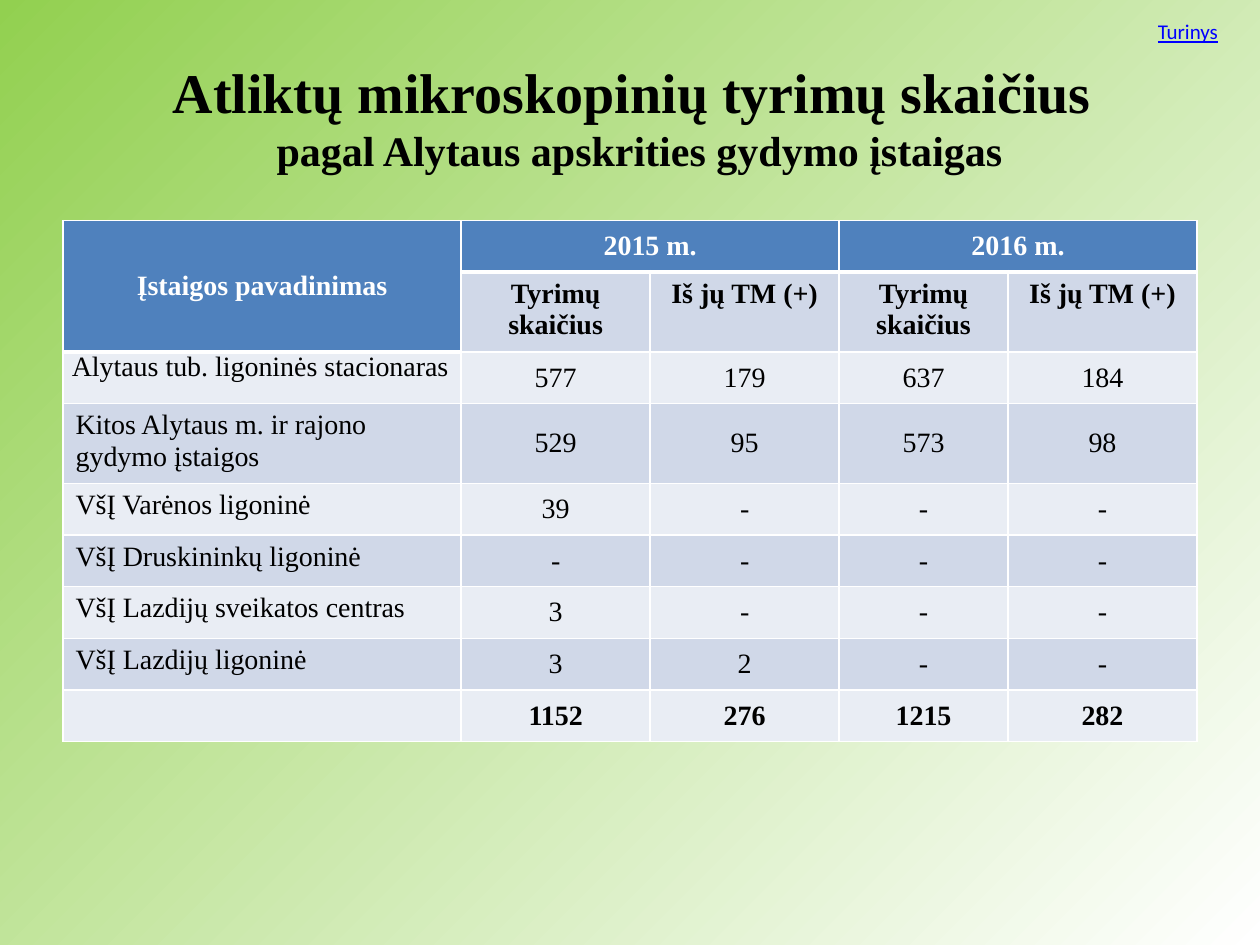
from typing import NamedTuple

from lxml import etree
from pptx import Presentation
from pptx.dml.color import RGBColor
from pptx.enum.text import MSO_ANCHOR as Anchor, PP_ALIGN as Align
from pptx.oxml.ns import qn
from pptx.util import Inches, Pt

COLORS = {"green": "92D050", "white": "FFFFFF", "black": "000000", "link": "0000FF",
          "head": "4F81BD", "dark": "D0D8E8", "light": "E9EDF4"}
SERIF = "Times New Roman"
COL_WIDTHS = [3.16, 1.5, 1.5, 1.34, 1.5]
ROW_HEIGHT = 0.41
MEASURES = ["Tyrimų skaičius", "Iš jų TM (+)"]


class Box(NamedTuple):
    left: float
    top: float
    width: float
    height: float

    def emu(self) -> list:
        return [Inches(v) for v in self]


class Row(NamedTuple):
    name: str
    values: list
    bold: bool = False


ROWS = [
    Row("Alytaus tub. ligoninės stacionaras", ["577", "179", "637", "184"]),
    Row("Kitos Alytaus m. ir rajono gydymo įstaigos", ["529", "95", "573", "98"]),
    Row("VšĮ Varėnos ligoninė", ["39", "-", "-", "-"]),
    Row("VšĮ Druskininkų ligoninė", ["-", "-", "-", "-"]),
    Row("VšĮ Lazdijų sveikatos centras", ["3", "-", "-", "-"]),
    Row("VšĮ Lazdijų ligoninė", ["3", "2", "-", "-"]),
    Row("", ["1152", "276", "1215", "282"], bold=True),
]


def rgb(name: str) -> RGBColor:
    return RGBColor.from_string(COLORS[name])


def add_text(p, text: str, size=16, font=SERIF, color="black", bold=False,
             underline=False, align=Align.LEFT) -> None:
    p.alignment = align
    r = p.add_run()
    r.text = text
    f = r.font
    f.size, f.name, f.bold, f.underline = Pt(size), font, bold, underline
    f.color.rgb = rgb(color)


def add_box(slide, box: Box):
    tf = slide.shapes.add_textbox(*box.emu()).text_frame
    tf.word_wrap = True
    tf.vertical_anchor = Anchor.MIDDLE
    return tf.paragraphs[0]


def set_borders(cell, top: int, bottom: int) -> None:
    tc_pr = cell._tc.get_or_add_tcPr()
    widths = {"a:lnL": 1, "a:lnR": 1, "a:lnT": top, "a:lnB": bottom}
    for i, (tag, width) in enumerate(widths.items()):
        ln = etree.Element(qn(tag), w=str(Pt(width)))
        fill = etree.SubElement(ln, qn("a:solidFill"))
        etree.SubElement(fill, qn("a:srgbClr"), val=COLORS["white"])
        tc_pr.insert(i, ln)


def fill_cell(cell, text: str, anchor=Anchor.MIDDLE, align=Align.CENTER, **fmt) -> None:
    cell.vertical_anchor = anchor
    if text:
        add_text(cell.text_frame.paragraphs[0], text, align=align, **fmt)


def add_results(slide) -> None:
    n_rows, n_cols = len(ROWS) + 2, len(COL_WIDTHS)
    box = Box(0.5, 1.75, sum(COL_WIDTHS), n_rows * ROW_HEIGHT)
    table = slide.shapes.add_table(n_rows, n_cols, *box.emu()).table
    for col, width in zip(table.columns, COL_WIDTHS):
        col.width = Inches(width)

    # Fills and borders; a thick line runs under the header cells
    for i in range(n_rows):
        for j in range(n_cols):
            is_head = i == 0 or (i, j) == (1, 0)
            cell = table.cell(i, j)
            cell.fill.solid()
            cell.fill.fore_color.rgb = rgb("head" if is_head else "dark" if i % 2 else "light")
            last_head = 1 if j == 0 else 0
            set_borders(cell, top=3 if i == last_head + 1 else 1,
                        bottom=3 if i == last_head else 1)

    # Header
    head = {"color": "white", "bold": True}
    table.cell(0, 0).merge(table.cell(1, 0))
    fill_cell(table.cell(0, 0), "Įstaigos pavadinimas", **head)
    for j, year in ((1, "2015 m."), (3, "2016 m.")):
        table.cell(0, j).merge(table.cell(0, j + 1))
        fill_cell(table.cell(0, j), year, **head)
        for k, measure in enumerate(MEASURES):
            fill_cell(table.cell(1, j + k), measure, anchor=Anchor.TOP, bold=True)

    # Body
    for i, row in enumerate(ROWS, start=2):
        fill_cell(table.cell(i, 0), row.name, anchor=Anchor.TOP, align=Align.LEFT)
        for j, value in enumerate(row.values, start=1):
            fill_cell(table.cell(i, j), value, bold=row.bold)
    first = table.cell(2, 0)
    first.margin_left = first.margin_right = Inches(0.07)
    first.margin_top = first.margin_bottom = 0


def main() -> None:
    prs = Presentation()
    prs.slide_width, prs.slide_height = Inches(10), Inches(7.5)
    slide = prs.slides.add_slide(prs.slide_layouts[6])

    # Background
    bg = slide.background.fill
    bg.gradient()
    bg.gradient_angle = 315
    for stop, color in zip(bg.gradient_stops, ("green", "white")):
        stop.color.rgb = rgb(color)

    # Title
    p = add_box(slide, Box(0.5, 0.3, 9.15, 1.25))
    add_text(p, "Atliktų mikroskopinių tyrimų skaičius ", size=32, bold=True, align=Align.CENTER)
    p.add_line_break()
    add_text(p, "pagal Alytaus apskrities gydymo įstaigas", size=24, bold=True, align=Align.CENTER)

    add_results(slide)

    # Contents label
    p = add_box(slide, Box(9.09, 0.1, 0.91, 0.3))
    add_text(p, "Turinys", size=12, font="Calibri", color="link", underline=True)

    prs.save("out.pptx")


if __name__ == "__main__":
    main()
